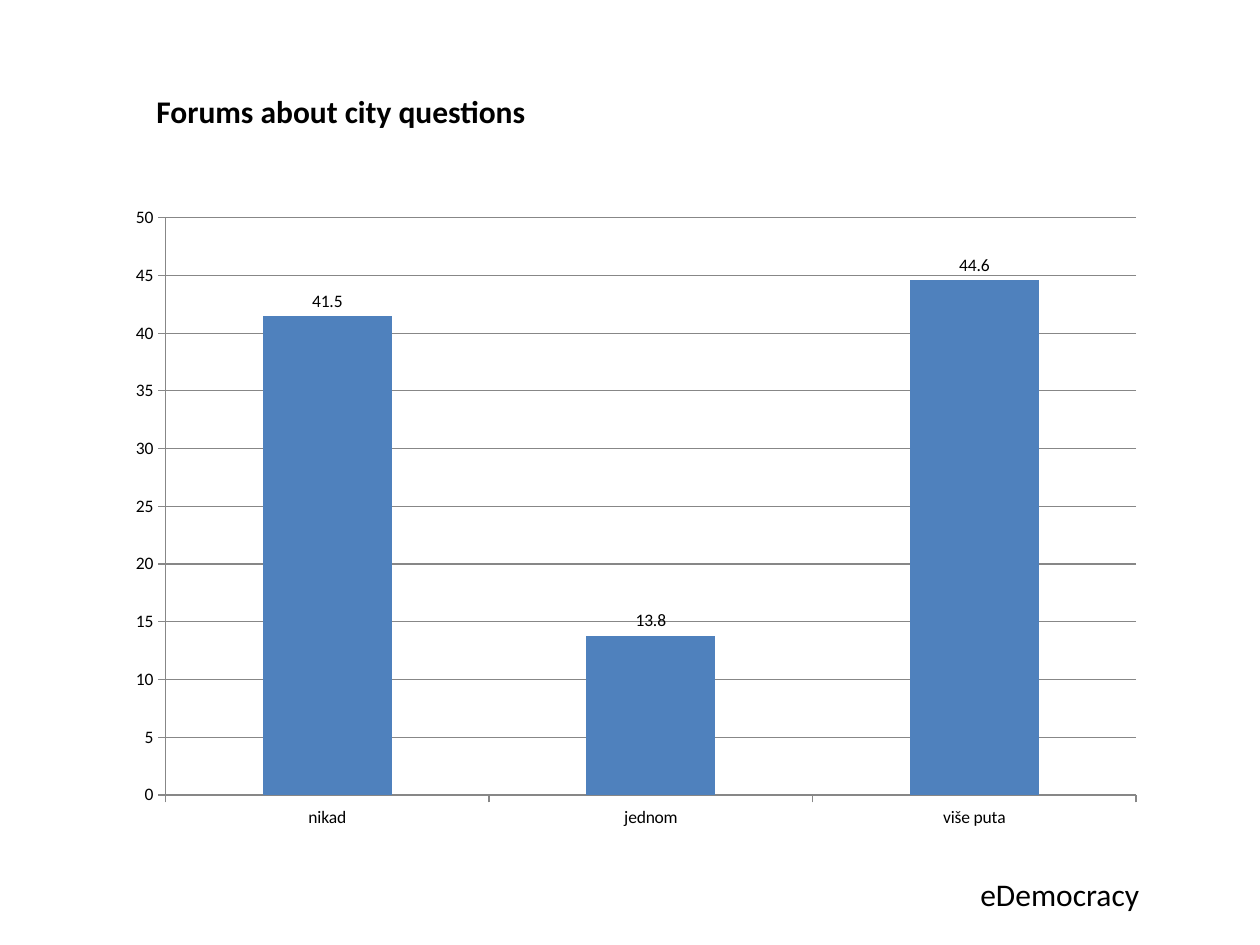
from pptx import Presentation
from pptx.chart.data import CategoryChartData
from pptx.dml.color import RGBColor
from pptx.enum.chart import XL_CHART_TYPE, XL_LABEL_POSITION, XL_TICK_MARK
from pptx.enum.text import MSO_AUTO_SIZE
from pptx.util import Emu, Pt

PX = 914400 // 126
FONT = "Calibri"
COLORS = {"text": "000000", "bar": "4F81BD", "line": "878787", "background": "FFFFFF"}


def color(name):
    return RGBColor.from_string(COLORS[name])


def add_text(text, left, top, width, height, size=18, bold=False):
    box = slide.shapes.add_textbox(*(Emu(n * PX) for n in (left, top, width, height)))
    frame = box.text_frame
    frame.word_wrap = True
    frame.auto_size = MSO_AUTO_SIZE.SHAPE_TO_FIT_TEXT
    run = frame.paragraphs[0].add_run()
    run.text = text
    run.font.name = FONT
    run.font.size = Pt(size)
    run.font.bold = bold
    run.font.color.rgb = color("text")


deck = Presentation()
deck.slide_width = Emu(1260 * PX)
deck.slide_height = Emu(945 * PX)
slide = deck.slides.add_slide(deck.slide_layouts[6])
slide.background.fill.solid()
slide.background.fill.fore_color.rgb = color("background")

add_text("Forums about city questions", left=144, top=86, width=912, height=50, bold=True)
add_text("eDemocracy", left=968, top=869, width=258, height=50)

attendance = CategoryChartData()
attendance.categories = ["nikad", "jednom", "više puta"]
attendance.add_series("Series 1", [41.5, 13.8, 44.6])
chart = slide.shapes.add_chart(
    XL_CHART_TYPE.COLUMN_CLUSTERED,
    *(Emu(n * PX) for n in (115, 195, 1042, 645)),
    attendance,
).chart
chart.has_title = False
chart.has_legend = False
chart.font.name = FONT
chart.font.size = Pt(10)
chart.font.color.rgb = color("text")

columns = chart.plots[0]
columns.gap_width = 150
columns.vary_by_categories = False
columns.series[0].format.fill.solid()
columns.series[0].format.fill.fore_color.rgb = color("bar")
columns.has_data_labels = True
columns.data_labels.show_value = True
columns.data_labels.position = XL_LABEL_POSITION.OUTSIDE_END

for axis in (chart.category_axis, chart.value_axis):
    axis.major_tick_mark = XL_TICK_MARK.OUTSIDE
    axis.minor_tick_mark = XL_TICK_MARK.NONE
    axis.format.line.color.rgb = color("line")
    axis.format.line.width = Pt(0.75)

chart.value_axis.minimum_scale = 0
chart.value_axis.maximum_scale = 50
chart.value_axis.major_unit = 5
chart.value_axis.has_major_gridlines = True
chart.value_axis.major_gridlines.format.line.color.rgb = color("line")
chart.value_axis.major_gridlines.format.line.width = Pt(0.75)

deck.save("out.pptx")
